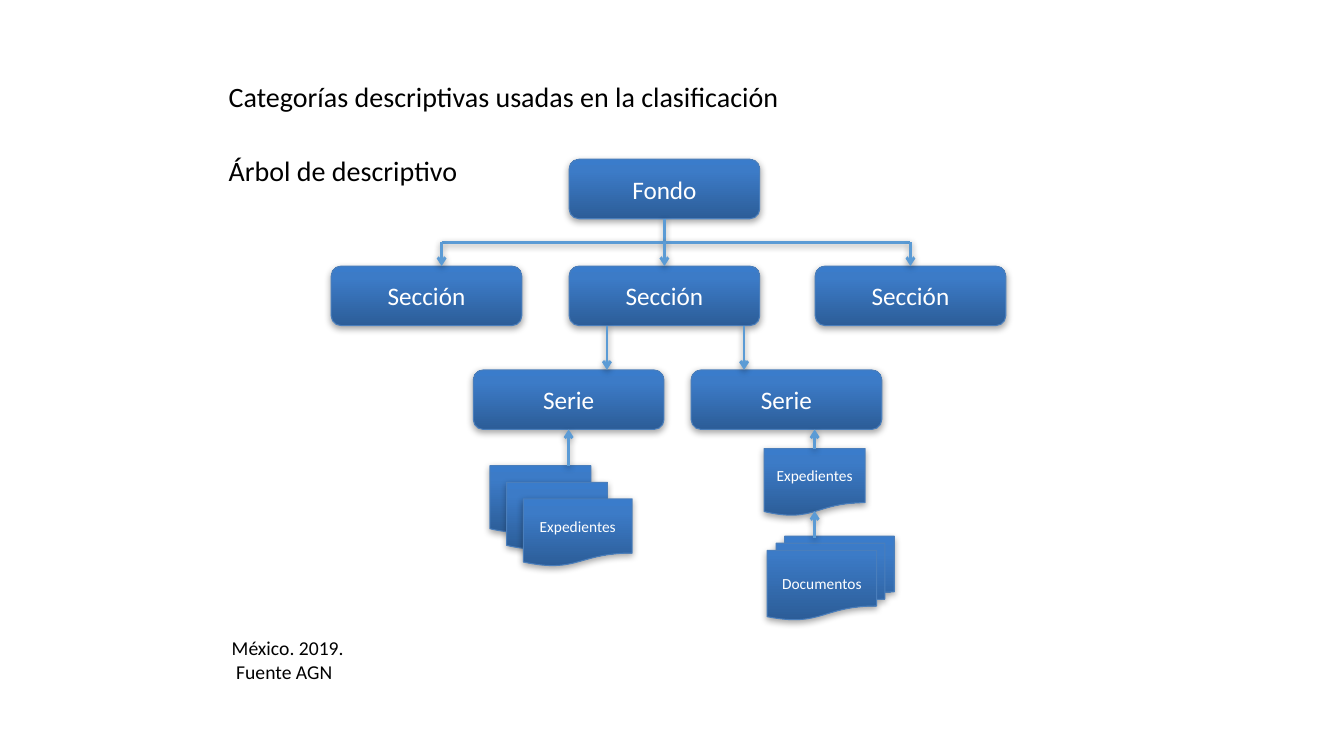
from pptx import Presentation
from pptx.dml.color import RGBColor
from pptx.enum.shapes import MSO_CONNECTOR as CONN, MSO_SHAPE as SHAPE
from pptx.enum.text import MSO_ANCHOR as ANCHOR, PP_ALIGN as ALIGN
from pptx.oxml import parse_xml
from pptx.oxml.ns import nsdecls
from pptx.util import Inches, Pt
from copy import deepcopy

COLORS = {"text": "000000", "label": "FFFFFF", "outline": "4A7EBB", "arrow": "5B9BD5",
          "bottom": "2C5D98", "middle": "3C7BC7", "top": "3A7CCB"}
COLORS = {name: RGBColor.from_string(value) for name, value in COLORS.items()}
BOX_W, BOX_H = 1.89, 0.59
DOC_W, DOC_H, WIDE_DOC_W = 1, 0.67, 1.08
STEP = 0.165
ROWS = [1.58, 2.64, 3.67]
BOTTOMS = [top + BOX_H for top in ROWS]
SECTIONS = [4.23, 6.59, 9.03]
SERIES = [5.64, 7.8]
BUS = (BOTTOMS[0] + ROWS[1]) / 2
FILES_X, FILES_Y = 4.86, 4.62
FILE_X, FILE_Y = 7.58, 4.45
PAPERS_Y = 5.32

prs = Presentation()
prs.slide_width, prs.slide_height = Inches(13.33), Inches(7.5)
s = prs.slides.add_slide(prs.slide_layouts[6])


def write(sp, text, size, color, anchor, align):
    tf = sp.text_frame
    tf.text = text
    tf.vertical_anchor = anchor
    for p in tf.paragraphs:
        p.alignment = align
        for r in p.runs:
            r.font.name, r.font.size = "Calibri", Pt(size)
            r.font.color.rgb = COLORS[color]


def add_shadow(sp, alpha, distance):
    effects = parse_xml(
        f'<a:effectLst {nsdecls("a")}><a:outerShdw blurRad="{Pt(5)}" dist="{Pt(distance)}" '
        f'dir="5400000" rotWithShape="0"><a:srgbClr val="000000"><a:alpha val="{alpha}000"/>'
        '</a:srgbClr></a:outerShdw></a:effectLst>')
    sp._element.spPr.append(effects)


for text, size, x, y, w, h, anchor in [
    ("Categorías descriptivas usadas en la clasificación", 20, 2.17, 0.6, 9, 0.71, ANCHOR.MIDDLE),
    ("Árbol de descriptivo", 20, 2.17, 1.47, 9, 5.45, ANCHOR.TOP),
    ("México. 2019.\n Fuente AGN", 14, 2.2, 6.26, 2.82, 0.57, ANCHOR.TOP),
]:
    sp = s.shapes.add_textbox(Inches(x), Inches(y), Inches(w), Inches(h))
    sp.text_frame.word_wrap = True
    write(sp, text, size, "text", anchor, ALIGN.LEFT)

boxes = [("Fondo", SECTIONS[1], ROWS[0])]
boxes += [("Sección", x, ROWS[1]) for x in SECTIONS]
boxes += [("Serie", x, ROWS[2]) for x in SERIES]
nodes = [(SHAPE.ROUNDED_RECTANGLE, text, 18, x - BOX_W / 2, y, BOX_W, BOX_H)
         for text, x, y in boxes]
nodes += [(SHAPE.FLOWCHART_DOCUMENT, text, 11, FILES_X + i * STEP, FILES_Y + i * STEP, w, DOC_H)
          for i, (text, w) in enumerate([("", DOC_W), ("", DOC_W), ("Expedientes", WIDE_DOC_W)])]
nodes += [(SHAPE.FLOWCHART_DOCUMENT, "Expedientes", 11, FILE_X, FILE_Y, DOC_W, DOC_H),
          (SHAPE.FLOWCHART_MULTIDOCUMENT, "Documentos", 11, 7.61, PAPERS_Y, 1.26, 0.83)]

for kind, text, size, x, y, w, h in nodes:
    sp = s.shapes.add_shape(kind, Inches(x), Inches(y), Inches(w), Inches(h))
    sp.line.color.rgb, sp.line.width = COLORS["outline"], Pt(0.75)
    sp.fill.gradient()
    sp.fill.gradient_angle = 90
    stops = sp._element.spPr.find(".//{*}gsLst")
    stops.append(deepcopy(stops[-1]))
    for stop, (position, name) in zip(sp.fill.gradient_stops,
                                      [(0, "bottom"), (0.8, "middle"), (1, "top")]):
        stop.position, stop.color.rgb = position, COLORS[name]
    add_shadow(sp, 35, 1.8)
    sp.text_frame.word_wrap = False
    write(sp, text, size, "label", ANCHOR.MIDDLE, ALIGN.CENTER)

LEFT_DROP, RIGHT_DROP = 4.38, SECTIONS[2]
lines = [(SECTIONS[1], BOTTOMS[0], SECTIONS[1], BUS, False),
         (LEFT_DROP, BUS, RIGHT_DROP, BUS, False)]
lines += [(x, BUS, x, ROWS[1], True) for x in (LEFT_DROP, SECTIONS[1], RIGHT_DROP)]
lines += [(x, BOTTOMS[1], x, ROWS[2], True) for x in (6.02, 7.38)]
lines += [(x, start, x, end, True) for x, start, end in [
    (8.08, PAPERS_Y + 0.02, 5.07), (8.08, FILE_Y, BOTTOMS[2]), (SERIES[0], FILES_Y, BOTTOMS[2])]]

for x1, y1, x2, y2, pointed in lines:
    sp = s.shapes.add_connector(CONN.STRAIGHT, Inches(x1), Inches(y1), Inches(x2), Inches(y2))
    sp.line.color.rgb, sp.line.width = COLORS["arrow"], Pt(2)
    if pointed:
        sp.line._get_or_add_ln().append(parse_xml(f'<a:tailEnd {nsdecls("a")} type="arrow"/>'))
    add_shadow(sp, 38, 1.6)

prs.save("out.pptx")
